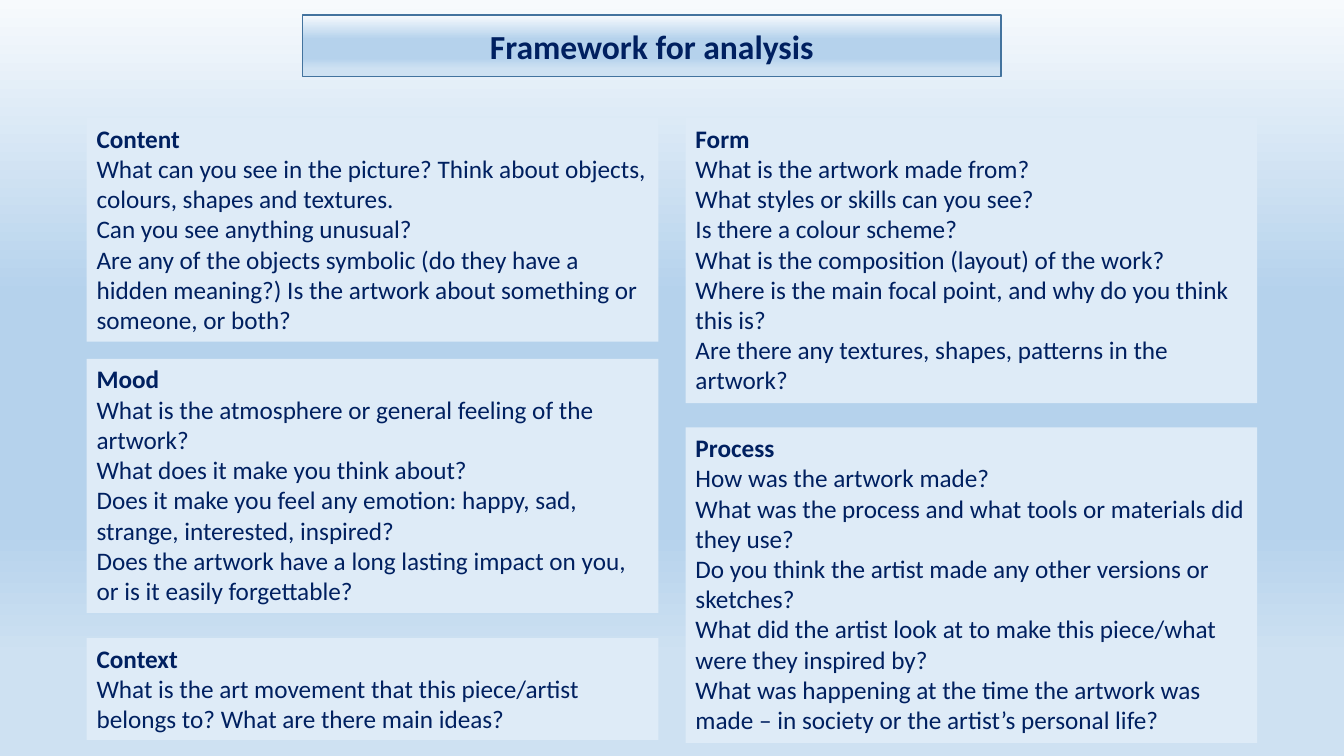
from lxml.etree import SubElement
from pptx import Presentation
from pptx.dml.color import RGBColor
from pptx.enum.shapes import MSO_SHAPE
from pptx.enum.text import MSO_ANCHOR, MSO_AUTO_SIZE, PP_ALIGN
from pptx.oxml.ns import qn
from pptx.util import Inches, Pt

COLORS = {"text": "002060", "panel": "DEEBF7", "edge": "43739E",
          "pale": "F7FAFD", "sky": "B5D2EC", "mist": "CEE1F2"}
STOPS = [(0, "pale"), (39, "sky"), (70, "sky"), (87, "mist")]

LEFT, RIGHT, WIDTH = 0.86, 6.8, 5.67
PANELS = [
    (LEFT, 1.17, 2.22, "Content", [
        "What can you see in the picture? Think about objects, colours, shapes and textures.",
        "Can you see anything unusual?",
        "Are any of the objects symbolic (do they have a hidden meaning?) "
        "Is the artwork about something or someone, or both?"]),
    (LEFT, 3.56, 2.52, "Mood", [
        "What is the atmosphere or general feeling of the artwork?",
        "What does it make you think about?",
        "Does it make you feel any emotion: happy, sad, strange, interested, inspired?",
        "Does the artwork have a long lasting impact on you, or is it easily forgettable?"]),
    (LEFT, 6.33, 1.01, "Context", [
        "What is the art movement that this piece/artist belongs to? "
        "What are there main ideas?"]),
    (RIGHT, 1.17, 2.83, "Form", [
        "What is the artwork made from?",
        "What styles or skills can you see?",
        "Is there a colour scheme?",
        "What is the composition (layout) of the work?",
        "Where is the main focal point, and why do you think this is?",
        "Are there any textures, shapes, patterns in the artwork?"]),
    (RIGHT, 4.24, 3.13, "Process", [
        "How was the artwork made?",
        "What was the process and what tools or materials did they use?",
        "Do you think the artist made any other versions or sketches?",
        "What did the artist look at to make this piece/what were they inspired by?",
        "What was happening at the time the artwork was made – "
        "in society or the artist’s personal life?"]),
]


def color(name):
    return RGBColor.from_string(COLORS[name])


class Sheet:
    """Holds the text style and the current slide."""

    def __init__(self, slide, font="Calibri", size=18):
        self.slide, self.font, self.size = slide, font, size

    def blend(self, owner, fill):
        """Fill a slide or shape with the vertical gradient in STOPS."""
        fill.gradient()
        fill.gradient_angle = 270
        stops = owner.element.find(".//" + qn("a:gsLst"))
        for stop in list(stops):
            stops.remove(stop)
        for place, name in STOPS:
            stop = SubElement(stops, qn("a:gs"), pos=str(place * 1000))
            SubElement(stop, qn("a:srgbClr"), val=COLORS[name])

    def backdrop(self):
        self.blend(self.slide, self.slide.background.fill)

    def add_text(self, para, text, size, bold=False):
        run = para.add_run()
        run.text = text
        run.font.name, run.font.size, run.font.bold = self.font, Pt(size), bold
        run.font.color.rgb = color("text")

    def title(self, text, *box):
        shape = self.slide.shapes.add_shape(MSO_SHAPE.RECTANGLE, *map(Inches, box))
        shape.shadow.inherit = False
        self.blend(shape, shape.fill)
        shape.line.color.rgb = color("edge")
        shape.line.width = Pt(1)
        frame = shape.text_frame
        frame.vertical_anchor = MSO_ANCHOR.MIDDLE
        para = frame.paragraphs[0]
        para.alignment = PP_ALIGN.CENTER
        self.add_text(para, text, 24, bold=True)

    def panel(self, left, top, height, head, lines):
        box = self.slide.shapes.add_textbox(*map(Inches, (left, top, WIDTH, height)))
        box.fill.solid()
        box.fill.fore_color.rgb = color("panel")
        frame = box.text_frame
        frame.word_wrap = True
        frame.auto_size = MSO_AUTO_SIZE.SHAPE_TO_FIT_TEXT
        self.add_text(frame.paragraphs[0], head, self.size, bold=True)
        for line in lines:
            self.add_text(frame.add_paragraph(), line, self.size)


def main():
    deck = Presentation()
    deck.slide_width, deck.slide_height = Inches(13.33), Inches(7.5)
    sheet = Sheet(deck.slides.add_slide(deck.slide_layouts[6]))
    sheet.backdrop()
    sheet.title("Framework for analysis", 3, 0.15, 6.93, 0.61)
    for panel in PANELS:
        sheet.panel(*panel)
    deck.save("out.pptx")


if __name__ == "__main__":
    main()
